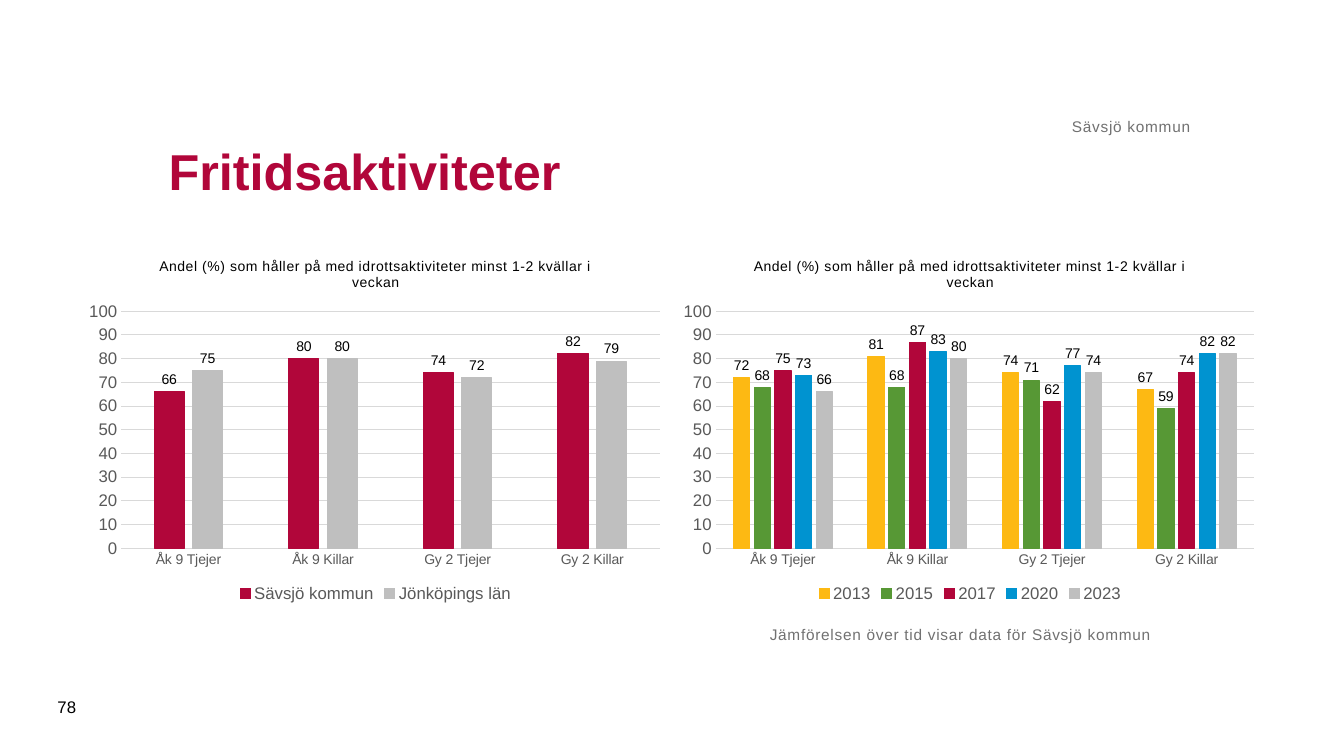
"""Build the leisure activities slide with two clustered column charts."""
from lxml import etree
from pptx import Presentation
from pptx.chart.data import CategoryChartData
from pptx.dml.color import RGBColor
from pptx.enum.chart import XL_CHART_TYPE, XL_LABEL_POSITION, XL_LEGEND_POSITION, XL_TICK_MARK
from pptx.enum.text import MSO_ANCHOR, PP_ALIGN
from pptx.oxml.ns import qn
from pptx.util import Cm, Pt

COLUMNS = XL_CHART_TYPE.COLUMN_CLUSTERED
OUTSIDE_END = XL_LABEL_POSITION.OUTSIDE_END
LEGEND_BOTTOM = XL_LEGEND_POSITION.BOTTOM
NO_TICK = XL_TICK_MARK.NONE
TOP, MIDDLE, BOTTOM = MSO_ANCHOR.TOP, MSO_ANCHOR.MIDDLE, MSO_ANCHOR.BOTTOM
LEFT, RIGHT = PP_ALIGN.LEFT, PP_ALIGN.RIGHT

FONT = "Arial"
NUMBER_FORMAT = "#,##0;#,##0"
LETTER_SPACING = 50
COLORS = {
    "red": "B1063A",
    "grey": "BFBFBF",
    "yellow": "FDB913",
    "green": "579835",
    "blue": "0093D0",
    "black": "000000",
    "axis_text": "595959",
    "note": "717171",
    "grid": "D9D9D9",
}
PLOT_LAYOUT = {"x": 0.07, "y": 0.19, "w": 0.91, "h": 0.65}
CHART_TITLE = "Andel (%) som håller på med idrottsaktiviteter minst 1-2 kvällar i veckan"
CATEGORIES = ["Åk 9 Tjejer", "Åk 9 Killar", "Gy 2 Tjejer", "Gy 2 Killar"]
REGION_SERIES = [
    ("Sävsjö kommun", "red", (66, 80, 74, 82)),
    ("Jönköpings län", "grey", (75, 80, 72, 79)),
]
YEAR_SERIES = [
    ("2013", "yellow", (72, 81, 74, 67)),
    ("2015", "green", (68, 68, 71, 59)),
    ("2017", "red", (75, 87, 62, 74)),
    ("2020", "blue", (73, 83, 77, 82)),
    ("2023", "grey", (66, 80, 74, 82)),
]


def color(name):
    """Return the named colour."""
    return RGBColor.from_string(COLORS[name])


def style_font(font, size, color_name, bold=False):
    """Apply the typeface, size, colour and weight."""
    font.name = FONT
    font.size = Pt(size)
    font.bold = bold
    font.color.rgb = color(color_name)


def style_line(line, color_name):
    """Apply a thin line."""
    line.color.rgb = color(color_name)
    line.width = Pt(0.75)


def space_letters(run):
    """Widen the letter spacing of a run."""
    run.font._element.set("spc", str(LETTER_SPACING))


def add_text(slide, text, box, size, color_name, bold=False, anchor=TOP,
             alignment=LEFT, note=False):
    """Add a text box; a note has spaced letters and no margins."""
    shape = slide.shapes.add_textbox(*map(Cm, box))
    frame = shape.text_frame
    frame.text = text
    frame.word_wrap = True
    frame.vertical_anchor = anchor
    paragraph = frame.paragraphs[0]
    paragraph.alignment = alignment
    run = paragraph.runs[0]
    style_font(run.font, size, color_name, bold)
    if note:
        frame.margin_left = frame.margin_right = 0
        frame.margin_top = frame.margin_bottom = 0
        space_letters(run)


def set_plot_layout(chart):
    """Fix the inner plot area as fractions of the chart."""
    plot_area = chart._chartSpace.chart.plotArea
    for old_layout in plot_area.findall(qn("c:layout")):
        plot_area.remove(old_layout)
    layout = etree.Element(qn("c:layout"))
    manual = etree.SubElement(layout, qn("c:manualLayout"))
    settings = {"layoutTarget": "inner", "xMode": "edge", "yMode": "edge", **PLOT_LAYOUT}
    for tag, value in settings.items():
        etree.SubElement(manual, qn(f"c:{tag}")).set("val", str(value))
    plot_area.insert(0, layout)


def style_axes(chart):
    """Style the category and value axes."""
    category_axis, value_axis = chart.category_axis, chart.value_axis
    for axis, size in ((category_axis, 10), (value_axis, 12)):
        axis.major_tick_mark = axis.minor_tick_mark = NO_TICK
        style_font(axis.tick_labels.font, size, "axis_text")
    style_line(category_axis.format.line, "grid")
    value_axis.format.line.fill.background()
    value_axis.minimum_scale = 0
    value_axis.maximum_scale = 100
    value_axis.major_unit = 10
    value_axis.tick_labels.number_format = NUMBER_FORMAT
    value_axis.tick_labels.number_format_is_linked = False
    style_line(value_axis.major_gridlines.format.line, "grid")


def style_series(series, color_name):
    """Colour one series and label its columns."""
    series.format.fill.solid()
    series.format.fill.fore_color.rgb = color(color_name)
    style_line(series.format.line, color_name)
    labels = series.data_labels
    labels.show_value = True
    labels.position = OUTSIDE_END
    labels.number_format = NUMBER_FORMAT
    labels.number_format_is_linked = False
    style_font(labels.font, 10, "black")


def add_column_chart(slide, left, series_rows):
    """Add a titled column chart with a legend below."""
    data = CategoryChartData()
    data.categories = CATEGORIES
    for name, _, values in series_rows:
        data.add_series(name, values)
    chart = slide.shapes.add_chart(
        COLUMNS, Cm(left), Cm(6.1), Cm(14.91), Cm(9.19), data).chart
    style_font(chart.font, 10, "black")
    chart.chart_title.text_frame.text = CHART_TITLE
    chart.chart_title.include_in_layout = False
    title_run = chart.chart_title.text_frame.paragraphs[0].runs[0]
    style_font(title_run.font, 10, "black")
    space_letters(title_run)
    chart.has_legend = True
    chart.legend.position = LEGEND_BOTTOM
    chart.legend.include_in_layout = False
    style_font(chart.legend.font, 12, "axis_text")
    style_axes(chart)
    plot = chart.plots[0]
    plot.vary_by_categories = False
    plot.gap_width = 219
    plot.overlap = -27
    for series, (_, color_name, _) in zip(plot.series, series_rows):
        style_series(series, color_name)
    set_plot_layout(chart)


def main():
    """Build and save the slide."""
    presentation = Presentation()
    presentation.slide_width = Cm(33.87)
    presentation.slide_height = Cm(19.05)
    slide = presentation.slides.add_slide(presentation.slide_layouts[6])
    add_column_chart(slide, 2.01, REGION_SERIES)
    add_column_chart(slide, 16.99, YEAR_SERIES)
    add_text(slide, "Fritidsaktiviteter", (4, 2.5, 26, 3.6), 36, "red",
             bold=True, anchor=MIDDLE)
    add_text(slide, "Sävsjö kommun", (4, 1.58, 26, 1.85), 11, "note",
             anchor=BOTTOM, alignment=RIGHT, note=True)
    add_text(slide, "78", (1.2, 17.3, 1.45, 1.02), 12, "black", anchor=MIDDLE)
    add_text(slide, "Jämförelsen över tid visar data för Sävsjö kommun",
             (19.4, 15.75, 13.5, 2.4), 11, "note", note=True)
    presentation.save("out.pptx")


if __name__ == "__main__":
    main()
